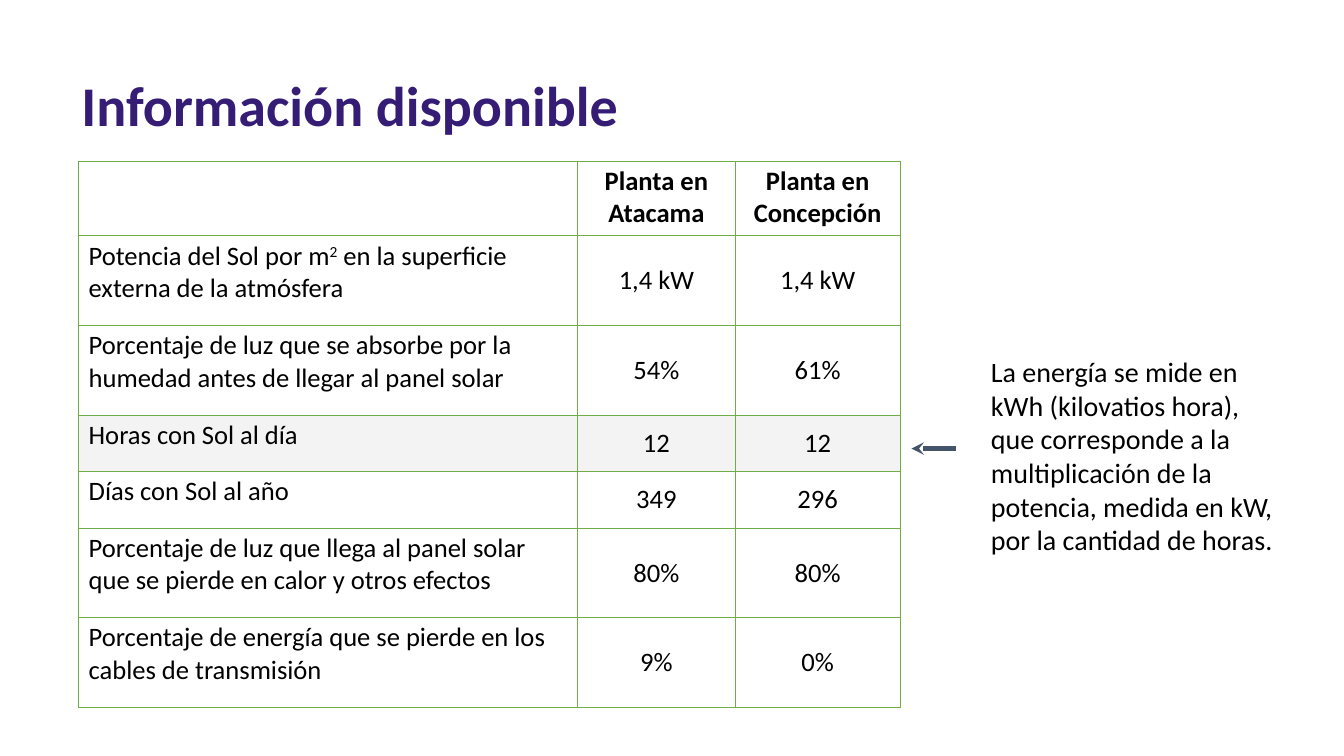
from lxml.etree import SubElement
from pptx import Presentation
from pptx.dml.color import RGBColor
from pptx.enum.shapes import MSO_CONNECTOR
from pptx.enum.text import MSO_ANCHOR, MSO_AUTO_SIZE, PP_ALIGN
from pptx.oxml.ns import qn
from pptx.util import Inches, Pt

COLORS = {
    "title": "351C75",
    "text": "000000",
    "border": "70AD47",
    "highlight": "F3F3F3",
    "arrow": "44546A",
}
COLUMN_WIDTHS = [4.95, 1.56, 1.64]
TALL_ROW, SHORT_ROW = 0.89, 0.56
ROWS = [
    (0.74, ["", "Planta en Atacama", "Planta en Concepción"]),
    (TALL_ROW, ["Potencia del Sol por m^2^ en la superficie externa de la atmósfera",
                "1,4 kW", "1,4 kW"]),
    (TALL_ROW, ["Porcentaje de luz que se absorbe por la humedad antes de llegar al panel solar",
                "54%", "61%"]),
    (SHORT_ROW, ["Horas con Sol al día", "12", "12"]),
    (SHORT_ROW, ["Días con Sol al año", "349", "296"]),
    (TALL_ROW, ["Porcentaje de luz que llega al panel solar que se pierde en calor y otros efectos",
                "80%", "80%"]),
    (TALL_ROW, ["Porcentaje de energía que se pierde en los cables de transmisión",
                "9%", "0%"]),
]
HIGHLIGHTED_ROW = 3


def write(paragraph, text, size, color="text", bold=False):
    """Fill a paragraph; text between carets is set as superscript."""
    for index, part in enumerate(text.split("^")):
        run = paragraph.add_run()
        run.text = part
        if index % 2:
            run.font._element.set("baseline", "30000")
    font = paragraph.font
    font.name, font.size, font.bold = "Calibri", Pt(size), bold
    font.color.rgb = RGBColor.from_string(COLORS[color])


def add_borders(cell):
    properties = cell._tc.get_or_add_tcPr()
    for side in ("a:lnL", "a:lnR", "a:lnT", "a:lnB"):
        border = SubElement(properties, qn(side), w=str(Pt(0.75)))
        fill = SubElement(border, qn("a:solidFill"))
        SubElement(fill, qn("a:srgbClr"), val=COLORS["border"])


prs = Presentation()
prs.slide_width, prs.slide_height = Inches(13.33), Inches(7.5)
slide = prs.slides.add_slide(prs.slide_layouts[6])

# Title and side note
for left, top, width, height, text, size, color, bold in [
    (0.71, 0.65, 8.59, 0.77, "Información disponible", 40, "title", True),
    (9.73, 3.47, 3.15, 2.12,
     "La energía se mide en kWh (kilovatios hora), que corresponde a la multiplicación "
     "de la potencia, medida en kW, por la cantidad de horas.", 20, "text", False),
]:
    frame = slide.shapes.add_textbox(
        Inches(left), Inches(top), Inches(width), Inches(height)).text_frame
    frame.word_wrap = True
    frame.auto_size = MSO_AUTO_SIZE.SHAPE_TO_FIT_TEXT
    write(frame.paragraphs[0], text, size, color, bold)

# Plant comparison
plants = slide.shapes.add_table(
    len(ROWS), len(COLUMN_WIDTHS),
    Inches(0.78), Inches(1.6), Inches(8.15), Inches(5.42)).table
plants.first_row = plants.horz_banding = False
for column, width in zip(plants.columns, COLUMN_WIDTHS):
    column.width = Inches(width)
for row_index, (height, values) in enumerate(ROWS):
    plants.rows[row_index].height = Inches(height)
    for column_index, value in enumerate(values):
        cell = plants.cell(row_index, column_index)
        cell.margin_top = cell.margin_bottom = Inches(0.04)
        add_borders(cell)
        if row_index == HIGHLIGHTED_ROW:
            cell.fill.solid()
            cell.fill.fore_color.rgb = RGBColor.from_string(COLORS["highlight"])
        else:
            cell.fill.background()
        paragraph = cell.text_frame.paragraphs[0]
        if column_index:
            paragraph.alignment = PP_ALIGN.CENTER
            if row_index:
                cell.vertical_anchor = MSO_ANCHOR.MIDDLE
        if value:
            write(paragraph, value, 19, bold=row_index == 0)

# Arrow from the note to the highlighted row
arrow = slide.shapes.add_connector(
    MSO_CONNECTOR.STRAIGHT, Inches(9.48), Inches(4.45), Inches(9.04), Inches(4.45))
arrow.line.color.rgb = RGBColor.from_string(COLORS["arrow"])
arrow.line.width = Pt(3)
SubElement(arrow.line._get_or_add_ln(), qn("a:tailEnd"), type="stealth")
SubElement(arrow._element.spPr, qn("a:effectLst"))

prs.save("out.pptx")
